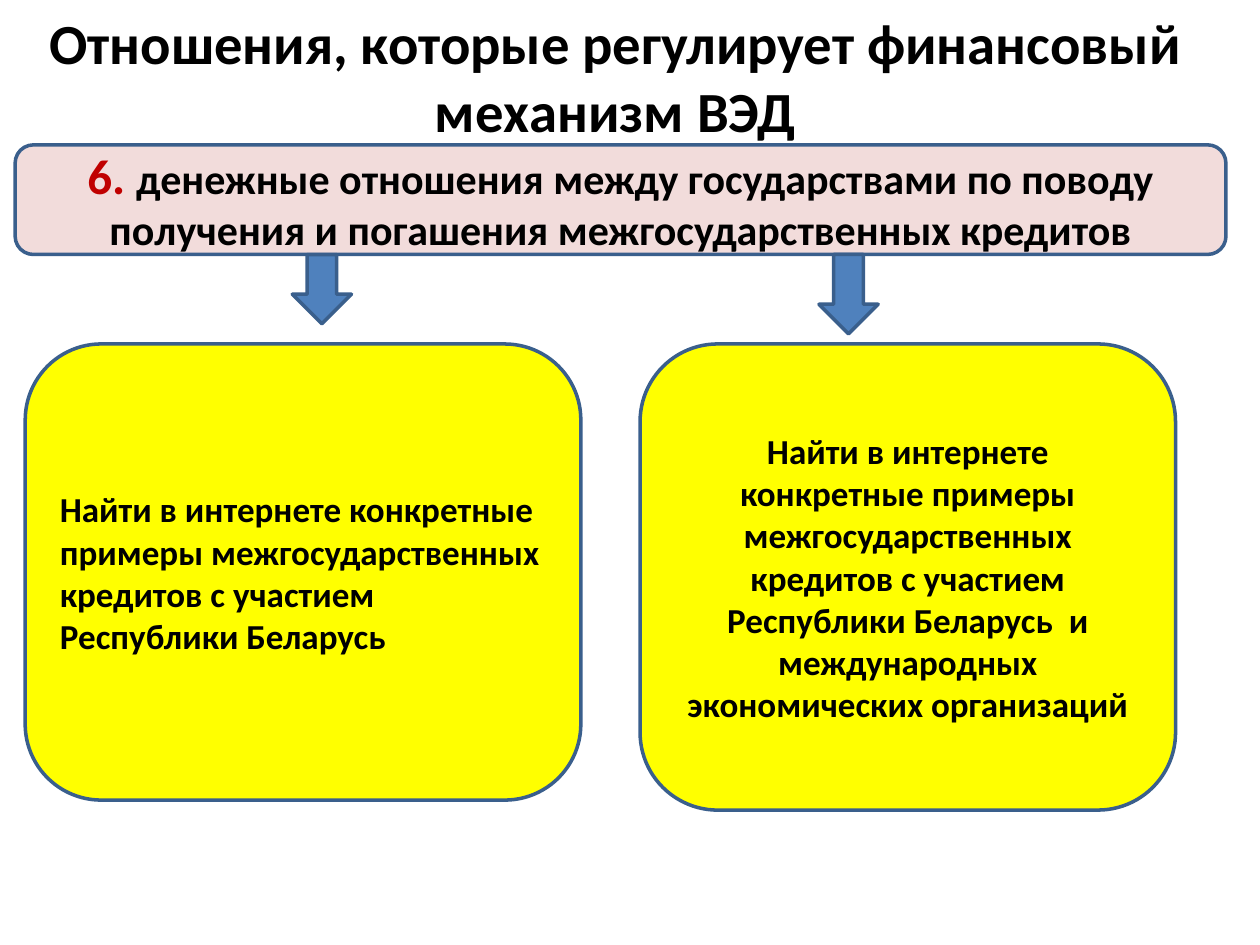
from dataclasses import dataclass
from pptx import Presentation, util as u
from pptx.dml.color import RGBColor
from pptx.enum import shapes, text

Kind = shapes.MSO_SHAPE
Align = text.PP_ALIGN


@dataclass(frozen=True)
class Theme:
    font: str = "Calibri"
    ink: str = "000000"
    mark: str = "C00000"
    rose: str = "F2DCDB"
    task: str = "FFFF00"
    arrow: str = "4F81BD"
    edge: str = "3A5F8C"
    line: float = 2
    title: float = 32.4
    number: float = 28
    lead: float = 24
    body: float = 20


theme = Theme()
CELL = u.Inches(0.1)  # grid of 100 columns by 75 rows


def place(box):
    """Turn left, top, width, height in grid cells into lengths."""
    return [round(n * CELL) for n in box]


def style(run, size, color=theme.ink):
    run.font.name = theme.font
    run.font.size = u.Pt(size)
    run.font.bold = True
    run.font.color.rgb = RGBColor.from_string(color)


def draw(slide, kind, box, fill):
    shape = slide.shapes.add_shape(kind, *place(box))
    shape.shadow.inherit = False
    shape.fill.solid()
    shape.fill.fore_color.rgb = RGBColor.from_string(fill)
    shape.line.color.rgb = RGBColor.from_string(theme.edge)
    shape.line.width = u.Pt(theme.line)
    return shape


def write(shape, parts, align):
    """Fill a shape with one paragraph of (words, size, colour) parts."""
    frame = shape.text_frame
    frame.word_wrap = True
    frame.vertical_anchor = text.MSO_ANCHOR.MIDDLE
    para = frame.paragraphs[0]
    para.alignment = align
    for words, size, color in parts:
        run = para.add_run()
        run.text = words
        style(run, size, color)


def head(slide, box, words):
    title = slide.shapes.title
    title.left, title.top, title.width, title.height = place(box)
    title.text_frame.auto_size = text.MSO_AUTO_SIZE.NONE
    write(title, [(words, theme.title, theme.ink)], Align.CENTER)


def banner(slide, box, number, words):
    shape = draw(slide, Kind.ROUNDED_RECTANGLE, box, theme.rose)
    write(shape, [(number, theme.number, theme.mark),
                  (words, theme.lead, theme.ink)], Align.CENTER)


def branch(slide, box, stem, words, align):
    """Place a task card and the arrow that leads to it.

    The stem gives the arrow's offset from the card's left, its rise
    above the card's top, and its height.
    """
    left, top, _, _ = box
    shift, rise, tall = stem
    card = draw(slide, Kind.ROUNDED_RECTANGLE, box, theme.task)
    write(card, [(words, theme.body, theme.ink)], align)
    draw(slide, Kind.DOWN_ARROW, (left + shift, top - rise, 4.7, tall),
         theme.arrow)


def main():
    deck = Presentation()
    deck.slide_width, deck.slide_height = 100 * CELL, 75 * CELL
    slide = deck.slides.add_slide(deck.slide_layouts[5])
    head(slide, (2.7, 1.3, 92.3, 9.5),
         "Отношения, которые регулирует финансовый механизм ВЭД")
    banner(slide, (1.2, 11.5, 96.1, 8.7), "6. ",
           "денежные отношения между государствами по поводу "
           "получения и погашения межгосударственных кредитов")
    task = ("Найти в интернете конкретные примеры межгосударственных "
            "кредитов с участием Республики Беларусь")
    branch(slide, (2, 27.3, 44.1, 36.2), (21.2, 7.1, 5.5), task, Align.LEFT)
    branch(slide, (50.8, 27.3, 42.5, 37), (14.2, 7.1, 6.3),
           task + "  и международных экономических организаций",
           Align.CENTER)
    deck.save("out.pptx")


if __name__ == "__main__":
    main()
